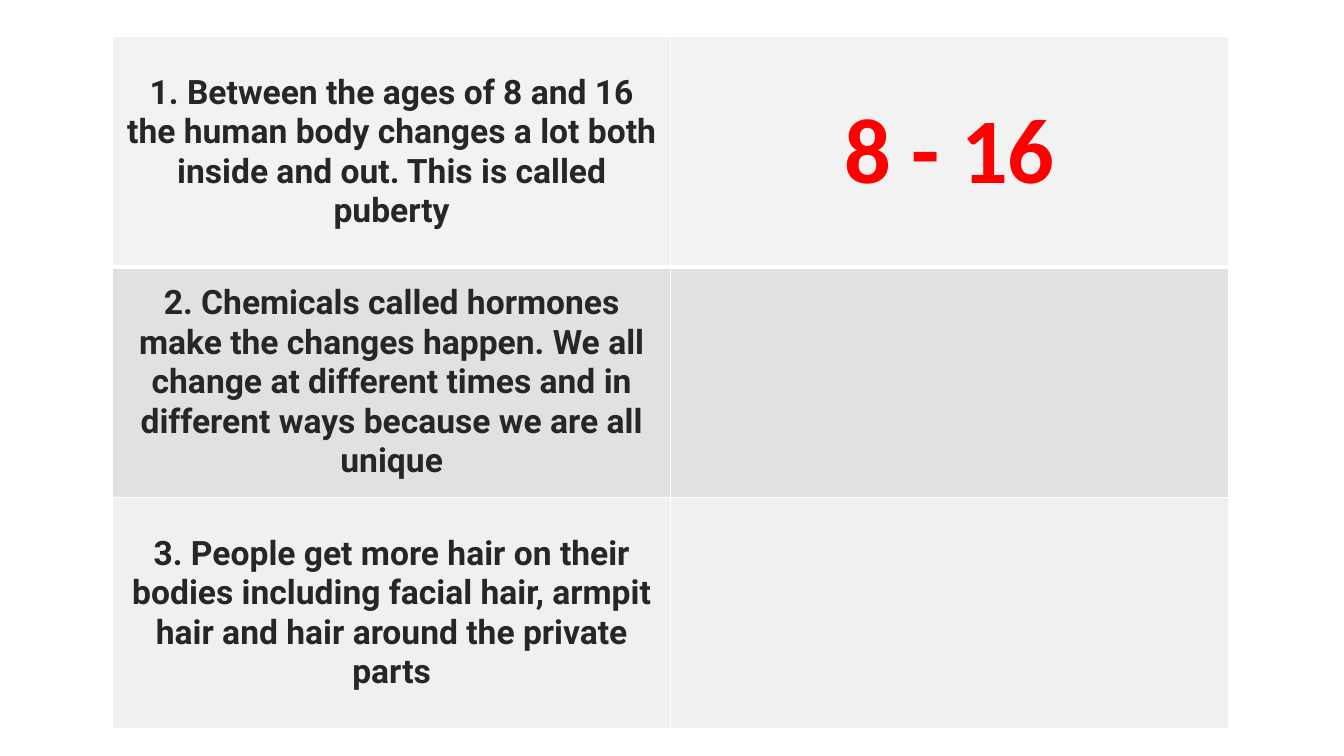
"""Builds a slide with a table of three facts about puberty and room for answers."""
from lxml.etree import SubElement
from pptx import Presentation
from pptx.dml.color import RGBColor
from pptx.enum.text import MSO_ANCHOR as Anchor, PP_ALIGN as Align
from pptx.oxml.ns import qn
from pptx.util import Cm, Pt

COLOURS = {
    "border": "FFFFFF",
    "fact": "262626",
    "answer": "FF0000",
    "first row": "F2F2F2",
    "second row": "E1E1E1",
    "third row": "F0F0F0",
}
FACT_STYLE = ("Roboto", 24, "fact")
ANSWER_STYLE = ("Calibri", 66, "answer")
ROWS = [
    ("1. Between the ages of 8 and 16 the human body changes a lot both "
     "inside and out. This is called puberty", "8 - 16", "first row"),
    ("2. Chemicals called hormones make the changes happen. We all change at "
     "different times and in different ways because we are all unique",
     "", "second row"),
    ("3. People get more hair on their bodies including facial hair, armpit "
     "hair and hair around the private parts", "", "third row"),
]
COLUMN_WIDTH, ROW_HEIGHT = Cm(14.06), Cm(5.81)


def add_border(cell, side, width):
    properties = cell._tc.get_or_add_tcPr()
    line = SubElement(properties, qn(f"a:ln{side}"), w=str(Pt(width)))
    solid = SubElement(line, qn("a:solidFill"))
    SubElement(solid, qn("a:srgbClr"), val=COLOURS["border"])


def format_cell(cell, fill, top, bottom):
    for side, width in (("L", 1), ("R", 1), ("T", top), ("B", bottom)):
        add_border(cell, side, width)
    cell.fill.solid()
    cell.fill.fore_color.rgb = RGBColor.from_string(COLOURS[fill])
    cell.vertical_anchor = Anchor.MIDDLE


def write_cell(cell, text, style):
    font_name, size, colour = style
    cell.text_frame.text = text
    paragraph = cell.text_frame.paragraphs[0]
    paragraph.alignment = Align.CENTER
    for run in paragraph.runs:
        run.font.name = font_name
        run.font.size = Pt(size)
        run.font.bold = True
        run.font.color.rgb = RGBColor.from_string(COLOURS[colour])


def add_facts_table(slide):
    facts = slide.shapes.add_table(
        len(ROWS), 2, Cm(2.84), Cm(0.92),
        COLUMN_WIDTH * 2, ROW_HEIGHT * len(ROWS)).table
    for column in facts.columns:
        column.width = COLUMN_WIDTH
    for index, (fact, answer, fill) in enumerate(ROWS):
        facts.rows[index].height = ROW_HEIGHT
        top = 3 if index == 1 else 1
        bottom = 3 if index == 0 else 1
        for cell in facts.rows[index].cells:
            format_cell(cell, fill, top, bottom)
        write_cell(facts.cell(index, 0), fact, FACT_STYLE)
        if answer:
            write_cell(facts.cell(index, 1), answer, ANSWER_STYLE)


def main():
    deck = Presentation()
    deck.slide_width, deck.slide_height = Cm(33.87), Cm(19.05)
    blank_layout = deck.slide_layouts[6]
    add_facts_table(deck.slides.add_slide(blank_layout))
    deck.save("out.pptx")


if __name__ == "__main__":
    main()
